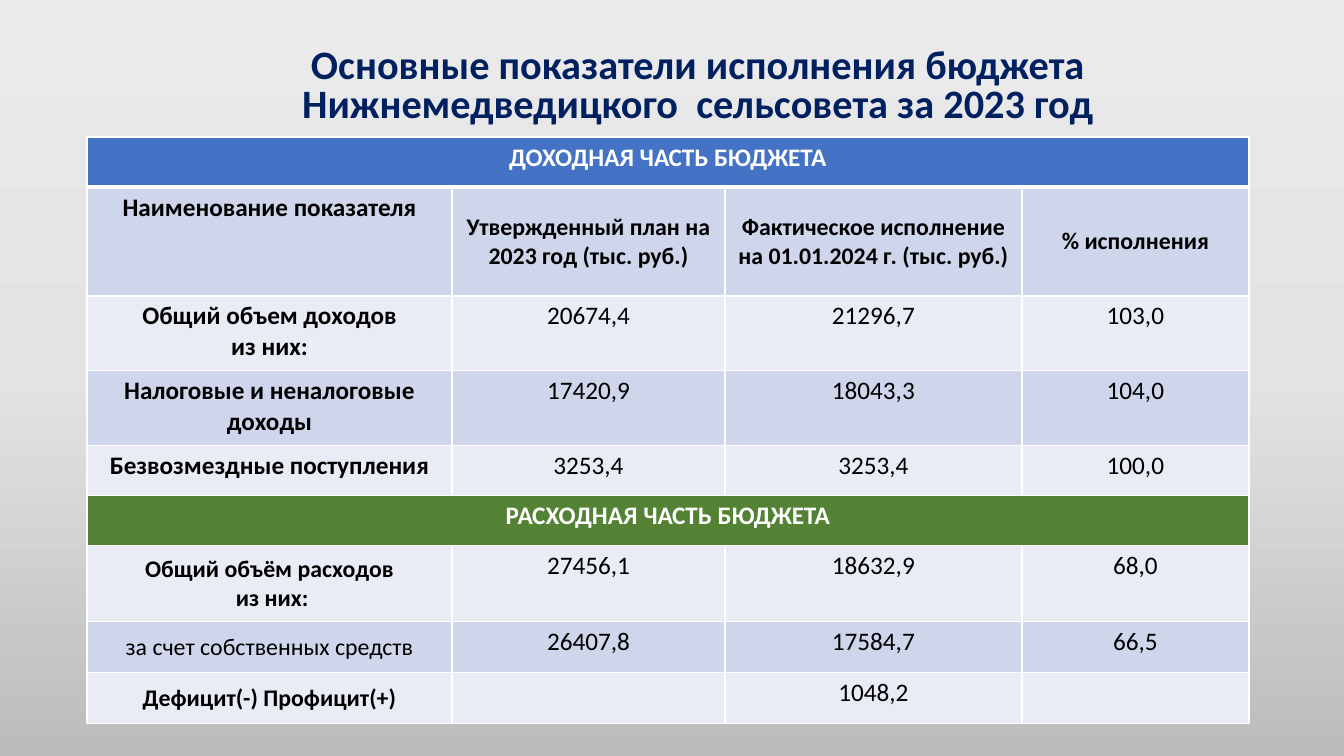
import copy

import lxml.etree
import pptx
import pptx.dml.color
import pptx.enum.text
import pptx.oxml.ns
import pptx.util

RGBColor = pptx.dml.color.RGBColor
ALIGN = pptx.enum.text.PP_ALIGN
ANCHOR = pptx.enum.text.MSO_ANCHOR
qn = pptx.oxml.ns.qn

EMU_PER_PX = 914400 / 100.8
FONT = "Calibri"

NAVY = RGBColor(0x00, 0x20, 0x60)
BLACK = RGBColor(0x00, 0x00, 0x00)
WHITE = RGBColor(0xFF, 0xFF, 0xFF)
INCOME_BLUE = RGBColor(0x44, 0x72, 0xC4)
EXPENSE_GREEN = RGBColor(0x54, 0x82, 0x35)
BAND_DARK = RGBColor(0xCF, 0xD5, 0xEA)
BAND_LIGHT = RGBColor(0xE9, 0xEB, 0xF5)
BACKGROUND_STOPS = [
    (0, RGBColor(0xEB, 0xEA, 0xEA)),
    (0.5, RGBColor(0xE4, 0xE3, 0xE3)),
    (1, RGBColor(0xBD, 0xBC, 0xBC)),
]

TITLE = "Основные показатели исполнения бюджета Нижнемедведицкого  сельсовета за 2023 год"
COLUMN_WIDTHS = [365, 273, 297, 227]
ROW_HEIGHTS = [50, 109, 75, 75, 50, 50, 76, 51, 51]
SECTIONS = {
    0: ("ДОХОДНАЯ ЧАСТЬ БЮДЖЕТА", INCOME_BLUE),
    5: ("РАСХОДНАЯ ЧАСТЬ БЮДЖЕТА", EXPENSE_GREEN),
}
HEADER_ROW = 1
FIRST_EXPENSE_ROW = 6
OWN_FUNDS_ROW = 7
BODY = {
    1: [
        "Наименование показателя",
        "Утвержденный план на 2023 год (тыс. руб.)",
        "Фактическое исполнение на 01.01.2024 г. (тыс. руб.)",
        "% исполнения",
    ],
    2: ["Общий объем доходов\nиз них:", "20674,4", "21296,7", "103,0"],
    3: ["Налоговые и неналоговые доходы", "17420,9", "18043,3", "104,0"],
    4: ["Безвозмездные поступления", "3253,4", "3253,4", "100,0"],
    6: ["Общий объём расходов\n из них:", "27456,1", "18632,9", "68,0"],
    7: ["за счет собственных средств", "26407,8", "17584,7", "66,5"],
    8: ["Дефицит(-) Профицит(+)", "", "1048,2", ""],
}


def px(length):
    return pptx.util.Emu(round(length * EMU_PER_PX))


def paint_background(page):
    fill = page.background.fill
    fill.gradient()
    fill.gradient_angle = 270
    stop_list = next(page.element.iter(qn("a:gsLst")))
    stop_list.append(copy.deepcopy(stop_list[-1]))
    for stop, (position, color) in zip(fill.gradient_stops, BACKGROUND_STOPS):
        stop.position = position
        stop.color.rgb = color


def add_span(para, text, size, color, bold):
    span = para.add_run()
    span.text = text
    span.font.name = FONT
    span.font.size = pptx.util.Pt(size)
    span.font.bold = bold
    span.font.color.rgb = color


def add_title(page):
    box = page.shapes.add_textbox(px(248), px(49), px(900), px(78))
    frame = box.text_frame
    frame.word_wrap = True
    frame.margin_left = frame.margin_right = 0
    frame.margin_top = frame.margin_bottom = 0
    para = frame.paragraphs[0]
    para.alignment = ALIGN.CENTER
    para.line_spacing = 0.8
    add_span(para, TITLE, 28.8, NAVY, True)


def set_borders(cell, bottom_width=1):
    properties = cell._tc.get_or_add_tcPr()
    widths = {"a:lnL": 1, "a:lnR": 1, "a:lnT": 1, "a:lnB": bottom_width}
    for tag, width in widths.items():
        line = lxml.etree.SubElement(properties, qn(tag), w=str(pptx.util.Pt(width)))
        solid = lxml.etree.SubElement(line, qn("a:solidFill"))
        lxml.etree.SubElement(solid, qn("a:srgbClr"), val=str(WHITE))


def fill_cell(cell, text, fill, size=18, color=BLACK, bold=False):
    cell.fill.solid()
    cell.fill.fore_color.rgb = fill
    for index, line in enumerate(text.split("\n")):
        frame = cell.text_frame
        para = frame.add_paragraph() if index else frame.paragraphs[0]
        para.alignment = ALIGN.CENTER
        if line:
            add_span(para, line, size, color, bold)


def center_cell(cell):
    cell.vertical_anchor = ANCHOR.MIDDLE
    cell.margin_left = cell.margin_right = px(9)
    cell.margin_top = cell.margin_bottom = px(9)


def fill_section_row(table, row):
    text, fill = SECTIONS[row]
    last_column = len(COLUMN_WIDTHS) - 1
    table.cell(row, 0).merge(table.cell(row, last_column))
    for column in range(len(COLUMN_WIDTHS)):
        set_borders(table.cell(row, column), 3 if row == 0 else 1)
    fill_cell(table.cell(row, 0), text, fill, color=WHITE, bold=True)


def fill_body_row(table, row):
    band = BAND_DARK if row % 2 else BAND_LIGHT
    for column, text in enumerate(BODY[row]):
        cell = table.cell(row, column)
        is_label = column == 0
        is_header = row == HEADER_ROW
        compact = is_label and row >= FIRST_EXPENSE_ROW or is_header and not is_label
        bold = is_header or is_label and row != OWN_FUNDS_ROW
        set_borders(cell)
        fill_cell(cell, text, band, size=17 if compact else 18, bold=bold)
        if compact:
            center_cell(cell)


def add_budget_table(page):
    frame = page.shapes.add_table(
        len(ROW_HEIGHTS), len(COLUMN_WIDTHS), px(87), px(137),
        px(sum(COLUMN_WIDTHS)), px(sum(ROW_HEIGHTS)),
    )
    table = frame.table
    for column, width in zip(table.columns, COLUMN_WIDTHS):
        column.width = px(width)
    for index, height in enumerate(ROW_HEIGHTS):
        table.rows[index].height = px(height)
        if index in SECTIONS:
            fill_section_row(table, index)
        else:
            fill_body_row(table, index)


def main():
    deck = pptx.Presentation()
    deck.slide_width = px(1344)
    deck.slide_height = px(756)
    page = deck.slides.add_slide(deck.slide_layouts[6])
    paint_background(page)
    add_title(page)
    add_budget_table(page)
    deck.save("out.pptx")


if __name__ == "__main__":
    main()
